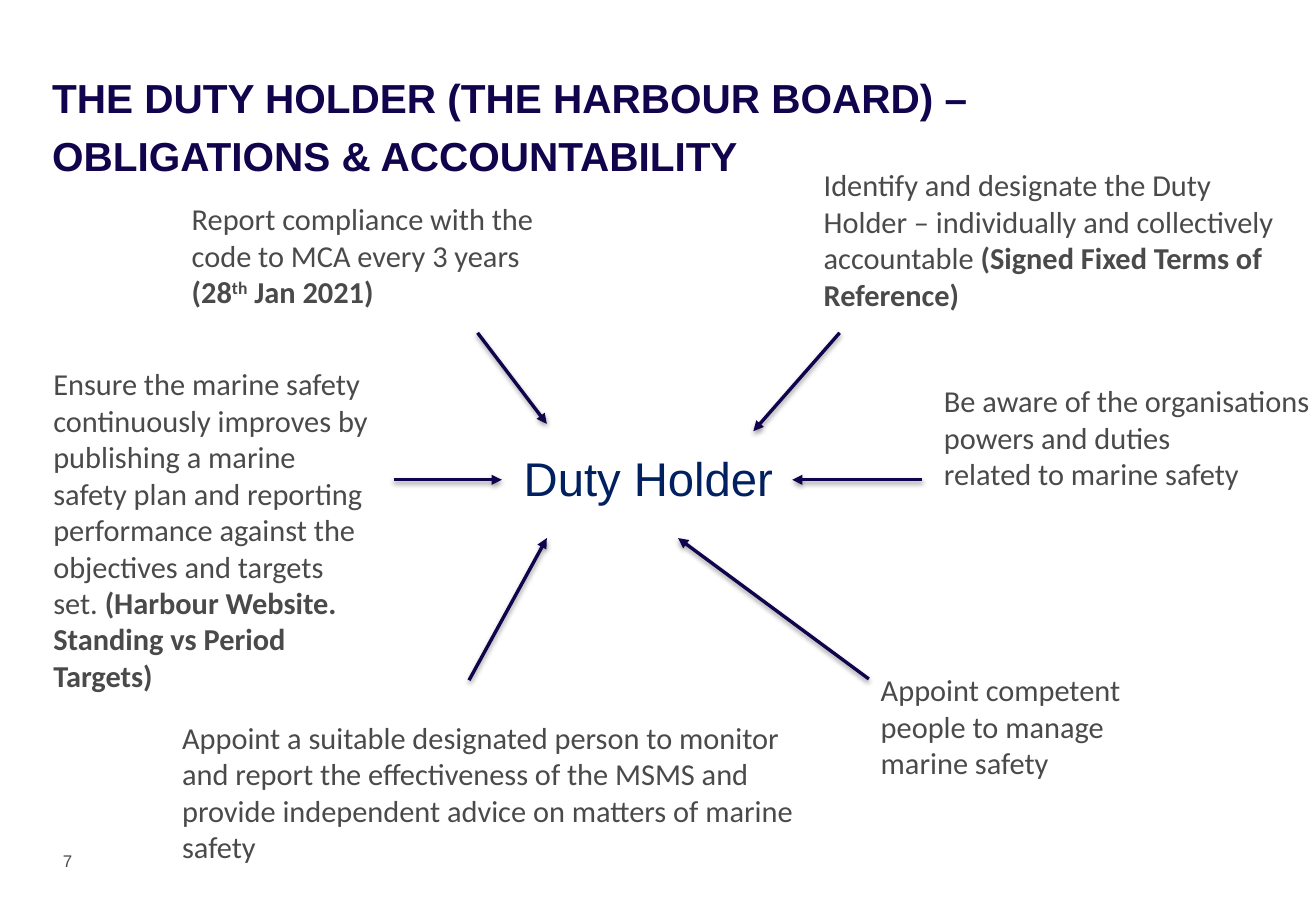
from lxml import etree
from pptx import Presentation
from pptx.dml.color import RGBColor
from pptx.enum.shapes import MSO_CONNECTOR
from pptx.enum.text import MSO_ANCHOR
from pptx.oxml import parse_xml
from pptx.oxml.ns import nsdecls, qn
from pptx.util import Inches, Pt

STRAIGHT = MSO_CONNECTOR.STRAIGHT
TOP = MSO_ANCHOR.TOP

COLORS = {"navy": "11034C", "blue": "002060", "grey": "4A4A4A", "black": "000000"}

# Font values for each kind of text
TITLE = {"name": "Arial", "size": Pt(24), "bold": True}
HUB = {"name": "Arial", "size": Pt(28), "bold": False}
DUTY = {"name": "Calibri", "size": Pt(18), "bold": False}
PAGE = {"name": "Arial", "size": Pt(10), "bold": False}

# Duties: box and paragraphs, each a list of (text, style) runs
DUTIES = [
    ((6.68, 1.32, 3.95, 1.31), [[
        ("Identify and designate the Duty Holder – individually and collectively accountable ", ""),
        ("(Signed Fixed Terms of Reference)", "bold")]]),
    ((7.67, 3.1, 3.41, 1.01), [
        [("Be aware of the organisations powers and duties", "")],
        [("related to marine safety", "")]]),
    ((1.4, 5.87, 5.75, 1.31), [
        [("Appoint a suitable designated person to monitor", "")],
        [("and report the effectiveness of the MSMS and", "")],
        [("provide independent advice on matters of marine safety", "")]]),
    ((7.15, 5.48, 2.64, 1.01), [
        [("Appoint competent people to manage marine safety", "")]]),
    ((1.48, 1.6, 3.17, 1.01), [[
        ("Report compliance with the code to MCA every 3 years ", ""),
        ("(28", "bold"), ("th", "bold super"), (" Jan 2021)", "bold")]]),
    ((0.34, 2.96, 2.82, 2.83), [[
        ("Ensure the marine safety continuously improves by publishing a marine safety plan "
         "and reporting performance against the objectives and targets set. ", ""),
        ("(Harbour Website. Standing vs Period Targets)", "bold")]]),
]

# Arrows towards the hub: start x, start y, end x, end y
ARROWS = [
    (6.91, 2.74, 6.2, 3.55),
    (7.59, 3.95, 6.52, 3.95),
    (3.86, 5.6, 4.5, 4.43),
    (7.15, 5.59, 5.58, 4.43),
    (3.93, 2.74, 4.5, 3.49),
    (3.24, 3.95, 4.13, 3.95),
]


def add_text(slide, box, paras, style, color, inset=True, pitch=None):
    frame = slide.shapes.add_textbox(*map(Inches, box)).text_frame
    frame.word_wrap = True
    frame.vertical_anchor = TOP
    if not inset:
        for side in ("left", "top", "right", "bottom"):
            setattr(frame, f"margin_{side}", 0)
    for i, runs in enumerate(paras):
        para = frame.add_paragraph() if i else frame.paragraphs[0]
        if pitch:
            para.line_spacing = pitch
        for text, mark in runs:
            run = para.add_run()
            run.text = text
            for key, value in style.items():
                setattr(run.font, key, value)
            run.font.color.rgb = RGBColor.from_string(COLORS[color])
            if "bold" in mark:
                run.font.bold = True
            if "super" in mark:
                run.font._element.set("baseline", "30000")


def add_arrow(slide, ends):
    arrow = slide.shapes.add_connector(STRAIGHT, *map(Inches, ends))
    arrow.line.width = Pt(2)
    arrow.line.color.rgb = RGBColor.from_string(COLORS["navy"])
    etree.SubElement(arrow.line._get_or_add_ln(), qn("a:tailEnd"), type="triangle")
    # Soft shadow straight below
    arrow._element.spPr.append(parse_xml(
        f'<a:effectLst {nsdecls("a")}>'
        f'<a:outerShdw blurRad="{Pt(3.1)}" dist="{Pt(1.6)}" dir="5400000" rotWithShape="0">'
        f'<a:srgbClr val="{COLORS["black"]}"><a:alpha val="38000"/></a:srgbClr>'
        '</a:outerShdw></a:effectLst>'))


def main():
    deck = Presentation()
    deck.slide_width, deck.slide_height = Inches(10.83), Inches(7.5)
    slide = deck.slides.add_slide(deck.slide_layouts[6])

    # Hub, page number and title
    add_text(slide, (4.31, 3.7, 2.22, 0.54), [[("Duty Holder", "")]], HUB, "blue", inset=False)
    add_text(slide, (0.42, 6.95, 2.53, 0.4), [[("7", "")]], PAGE, "grey")
    title = "THE DUTY HOLDER (THE HARBOUR BOARD) – OBLIGATIONS & ACCOUNTABILITY"
    add_text(slide, (0.43, 0.52, 8.75, 0.43), [[(title, "")]], TITLE, "navy",
             inset=False, pitch=Pt(34.5))

    # Duties around the hub
    for box, paras in DUTIES:
        add_text(slide, box, paras, DUTY, "grey")
    for ends in ARROWS:
        add_arrow(slide, ends)

    deck.save("out.pptx")


if __name__ == "__main__":
    main()
